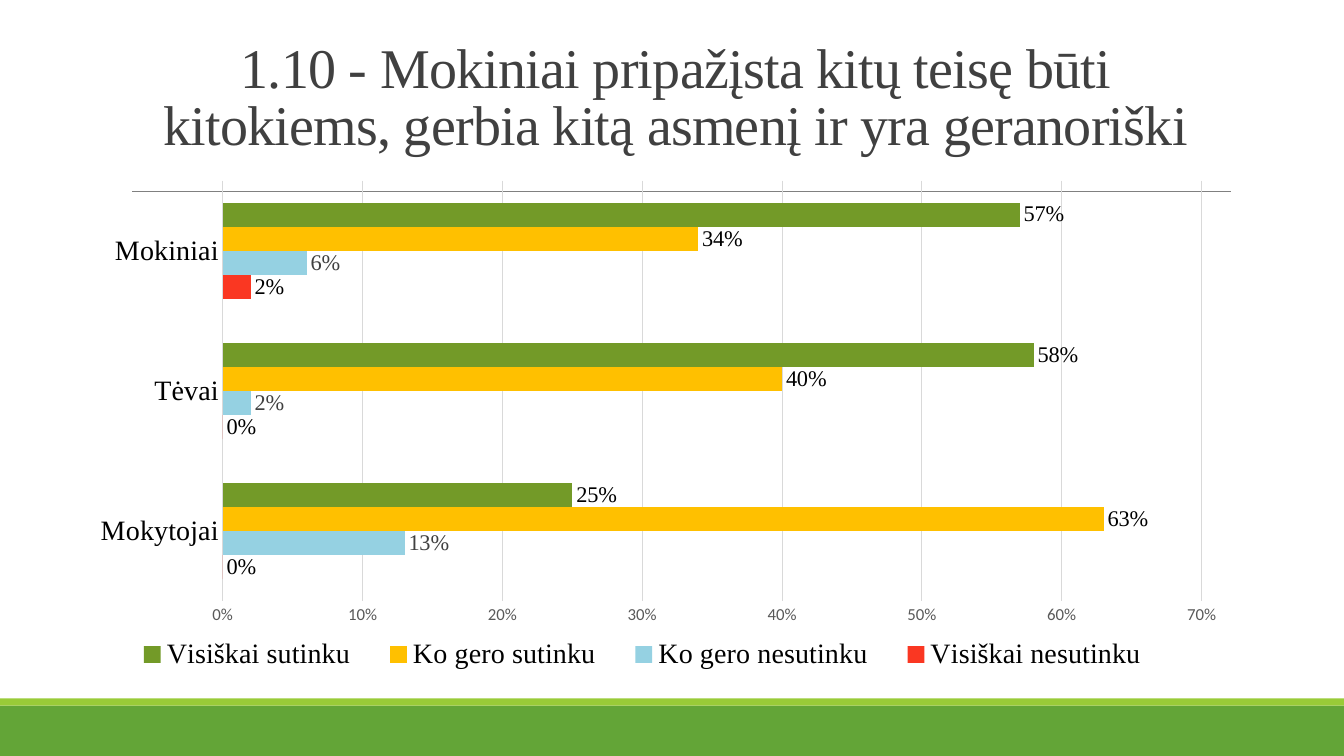
"""Build a slide with a clustered bar chart of survey answers from three groups."""
from lxml.etree import SubElement
from pptx import Presentation
from pptx.chart.data import CategoryChartData
from pptx.dml.color import RGBColor
from pptx.enum.chart import XL_CHART_TYPE, XL_LABEL_POSITION, XL_LEGEND_POSITION, XL_TICK_MARK
from pptx.enum.shapes import MSO_CONNECTOR, MSO_SHAPE
from pptx.enum.text import MSO_ANCHOR, PP_ALIGN
from pptx.oxml import parse_xml
from pptx.oxml.ns import nsdecls, qn
from pptx.util import Inches, Pt

SERIF = "Times New Roman"


def paint(target, color):
    """Give a fill or line format one solid colour."""
    getattr(target, "fill", target).solid()
    getattr(target, "fill", target).fore_color.rgb = RGBColor.from_string(color)


def style(font, size, color="000000", name=SERIF):
    """Set the size, colour and typeface of a font."""
    font.size, font.name, font.bold = Pt(size), name, False
    paint(font, color)


deck = Presentation()
deck.slide_width, deck.slide_height = Inches(13.33), Inches(7.5)
slide = deck.slides.add_slide(deck.slide_layouts[5])
shapes = slide.shapes

for top, height, color in [(7, 0.5, "63A537"), (6.93, 0.07, "99CB38")]:
    band = shapes.add_shape(MSO_SHAPE.RECTANGLE, 0, Inches(top), deck.slide_width, Inches(height))
    band.shadow.inherit = False
    paint(band, color)
    band.line.fill.background()

rule = shapes.add_connector(MSO_CONNECTOR.STRAIGHT, Inches(1.31), Inches(1.9), Inches(12.21), Inches(1.9))
paint(rule.line, "808080")
rule.line.width = Pt(0.5)
SubElement(rule._element.spPr, qn("a:effectLst"))

title = shapes.title
title.left, title.top, title.width, title.height = map(Inches, (1.2, 0.31, 11, 1.3))
frame = title.text_frame
frame.text = "1.10 - Mokiniai pripažįsta kitų teisę būti kitokiems, gerbia kitą asmenį ir yra geranoriški"
frame.word_wrap = True
frame.vertical_anchor = MSO_ANCHOR.BOTTOM
line = frame.paragraphs[0]
line.alignment, line.line_spacing = PP_ALIGN.CENTER, 0.85
style(line.font, 40, "404040")
line.runs[0].font._element.set("spc", "-50")

answers = [
    ("Visiškai nesutinku", (0, 0, 0.02), "FA3722", "000000"),
    ("Ko gero nesutinku", (0.13, 0.02, 0.06), "95D1E2", "404040"),
    ("Ko gero sutinku", (0.63, 0.4, 0.34), "FFC000", "000000"),
    ("Visiškai sutinku", (0.25, 0.58, 0.57), "739A28", "000000"),
]
data = CategoryChartData(number_format="0%")
data.categories = ["Mokytojai", "Tėvai", "Mokiniai"]
for name, values, *_ in answers:
    data.add_series(name, values)
place = map(Inches, (0.78, 1.69, 11.53, 5.11))
chart = shapes.add_chart(XL_CHART_TYPE.BAR_CLUSTERED, *place, data).chart
style(chart.font, 10, name="Calibri")
chart.has_title = False

plot = chart.plots[0]
plot.gap_width, plot.overlap, plot.vary_by_categories = 182, 0, False
for series, (_, _, color, ink) in zip(plot.series, answers):
    paint(series.format, color)
    labels = series.data_labels
    labels.show_value = True
    labels.position = XL_LABEL_POSITION.OUTSIDE_END
    labels.number_format, labels.number_format_is_linked = "0%", False
    style(labels.font, 16, ink)

groups, scale = chart.category_axis, chart.value_axis
for axis in (groups, scale):
    axis.major_tick_mark = axis.minor_tick_mark = XL_TICK_MARK.NONE
style(groups.tick_labels.font, 20)
style(scale.tick_labels.font, 12, "595959", "Calibri")
scale.tick_labels.number_format = "0%"
scale.tick_labels.number_format_is_linked = False
scale.minimum_scale, scale.maximum_scale, scale.major_unit = 0, 0.7, 0.1
scale.format.line.fill.background()
for edge in (groups.format.line, scale.major_gridlines.format.line):
    paint(edge, "D9D9D9")
    edge.width = Pt(0.75)

chart.has_legend = True
legend = chart.legend
legend.position = XL_LEGEND_POSITION.BOTTOM
legend.include_in_layout = False
style(legend.font, 20)

frames = [
    ("plotArea", 0, '<c:layoutTarget val="inner"/>', (0.124, 0.02, 0.842, 0.816)),
    ("legend", 1, "", (0.03, 0.9, 0.91, 0.08)),
]
for part, index, target, (x, y, w, h) in frames:
    node = chart._chartSpace.xpath(f"c:chart/c:{part}")[0]
    for old in node.findall(qn("c:layout")):
        node.remove(old)
    node.insert(index, parse_xml(
        f'<c:layout {nsdecls("c")}><c:manualLayout>{target}'
        '<c:xMode val="edge"/><c:yMode val="edge"/>'
        f'<c:x val="{x}"/><c:y val="{y}"/><c:w val="{w}"/><c:h val="{h}"/>'
        '</c:manualLayout></c:layout>'))

deck.save("out.pptx")
